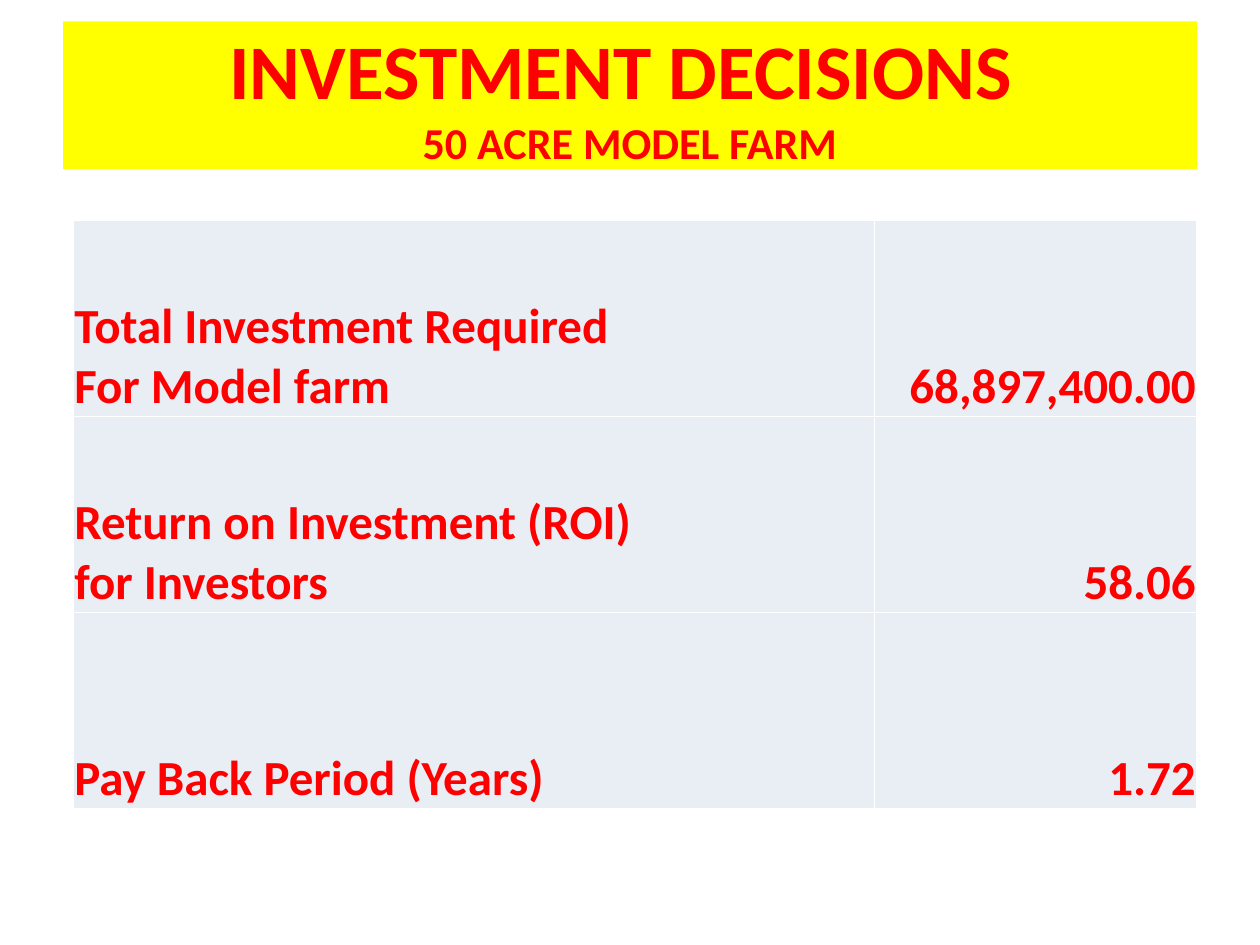
import pptx
import pptx.dml.color
import pptx.enum.text
import pptx.util
from lxml import etree
from pptx.oxml.ns import qn

Inches = pptx.util.Inches
RED = pptx.dml.color.RGBColor(0xFF, 0x00, 0x00)
YELLOW = pptx.dml.color.RGBColor(0xFF, 0xFF, 0x00)
PALE = pptx.dml.color.RGBColor(0xE9, 0xED, 0xF4)
WHITE = pptx.dml.color.RGBColor(0xFF, 0xFF, 0xFF)
ALIGN = pptx.enum.text.PP_ALIGN
ANCHOR = pptx.enum.text.MSO_ANCHOR

TITLE_LINES = [("INVESTMENT DECISIONS ", 44.1), ("50 ACRE MODEL FARM", 25.2)]
ROWS = [
    (["Total Investment Required", "For Model farm"], ["68,897,400.00"]),
    (["Return on Investment (ROI)", "for Investors"], ["58.06"]),
    (["Pay Back Period (Years)"], ["1.72"]),
]
COL_SHARES = [6.36 / 8.92, 2.56 / 8.92]
CELL_FORMAT = {
    "vertical_anchor": ANCHOR.BOTTOM,
    "margin_left": Inches(0.01),
    "margin_right": Inches(0.01),
    "margin_top": Inches(0.01),
    "margin_bottom": 0,
}


def set_attrs(obj, values):
    """Set each named attribute of an object."""
    for name, value in values.items():
        setattr(obj, name, value)


def set_font(font, size):
    """Apply the bold red face at the given size."""
    set_attrs(font, {"name": "Calibri", "size": pptx.util.Pt(size), "bold": True})
    font.color.rgb = RED


def add_borders(cell):
    """Draw a thin white line on every side of a cell."""
    tcPr = cell._tc.get_or_add_tcPr()
    for side in ("a:lnL", "a:lnR", "a:lnT", "a:lnB"):
        ln = etree.SubElement(tcPr, qn(side), w=str(pptx.util.Pt(1)))
        fill = etree.SubElement(ln, qn("a:solidFill"))
        etree.SubElement(fill, qn("a:srgbClr"), val=str(WHITE))


def fill_cell(cell, lines, align):
    """Write the lines of one cell and format it."""
    set_attrs(cell, CELL_FORMAT)
    add_borders(cell)
    cell.fill.solid()
    cell.fill.fore_color.rgb = PALE
    cell.text = "\n".join(lines)
    for p in cell.text_frame.paragraphs:
        p.alignment = align
        set_font(p.runs[0].font, 28)


def place_title(sp, left, top, width, height):
    """Place the two-line title on its yellow band."""
    set_attrs(sp, {"left": left, "top": top, "width": width, "height": height})
    sp.fill.solid()
    sp.fill.fore_color.rgb = YELLOW
    tf = sp.text_frame
    set_attrs(tf, {"word_wrap": True, "vertical_anchor": ANCHOR.MIDDLE,
                   "auto_size": pptx.enum.text.MSO_AUTO_SIZE.NONE})
    p = tf.paragraphs[0]
    p.alignment = ALIGN.CENTER
    for i, (text, size) in enumerate(TITLE_LINES):
        if i:
            p.add_line_break()
        r = p.add_run()
        r.text = text
        set_font(r.font, size)


def place_table(s, left, top, width, height):
    """Place the table of investment figures in the given box."""
    table = s.shapes.add_table(len(ROWS), 2, left, top, width, height).table
    set_attrs(table, {"first_row": False, "horz_banding": False})
    for col, share in zip(table.columns, COL_SHARES):
        col.width = int(width * share)
    for i, row in enumerate(ROWS):
        for j, align in enumerate((ALIGN.LEFT, ALIGN.RIGHT)):
            fill_cell(table.cell(i, j), row[j], align)


def main():
    """Build the slide and save it."""
    prs = pptx.Presentation()
    set_attrs(prs, {"slide_width": Inches(10), "slide_height": Inches(7.5)})
    s = prs.slides.add_slide(prs.slide_layouts[5])
    place_title(s.shapes.title, Inches(0.5), Inches(0.17), Inches(9), Inches(1.17))
    place_table(s, Inches(0.58), Inches(1.75), Inches(8.92), Inches(4.67))
    prs.save("out.pptx")


if __name__ == "__main__":
    main()
